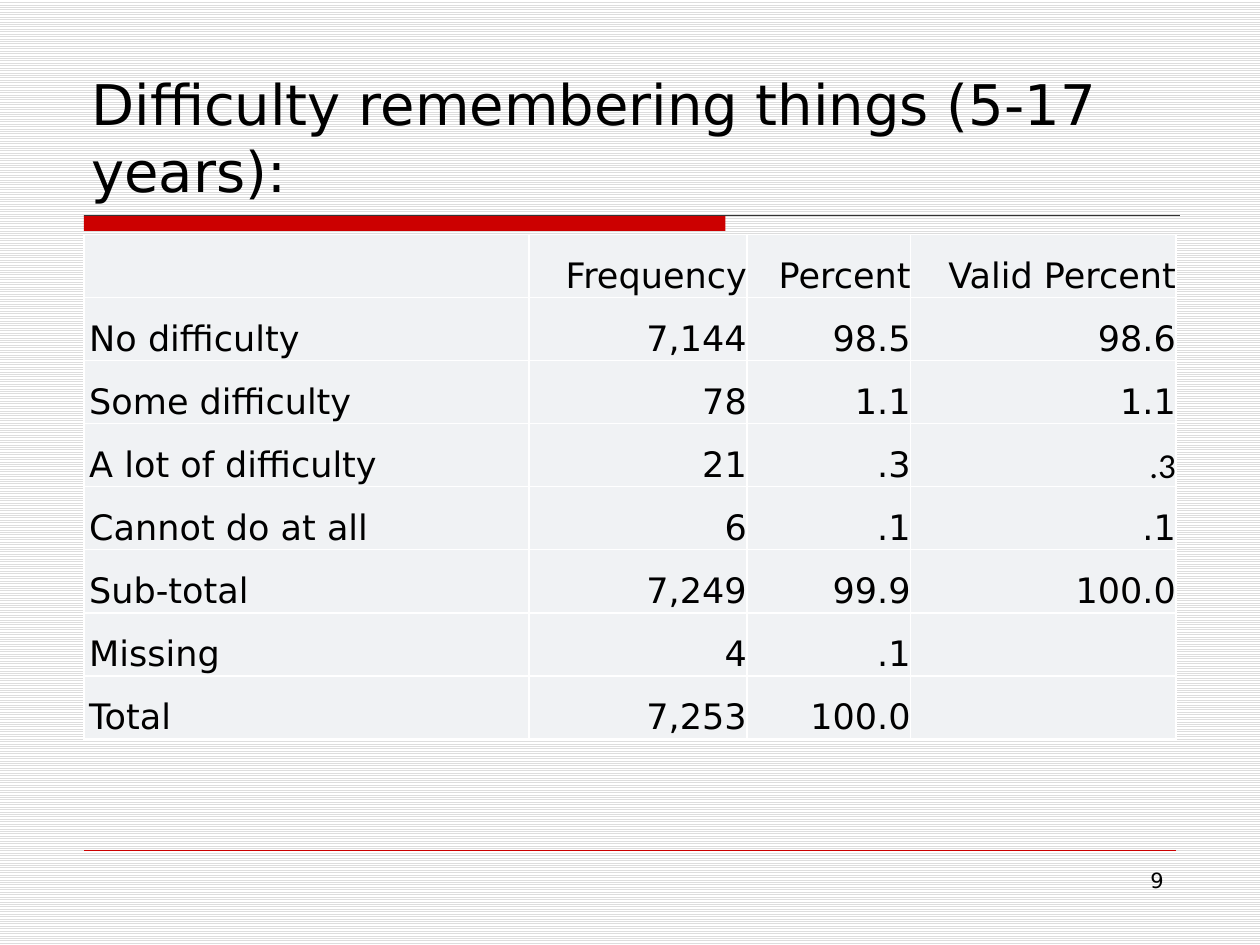
from lxml import etree
from pptx import Presentation
from pptx.dml.color import RGBColor
from pptx.enum.dml import MSO_PATTERN
from pptx.enum.shapes import MSO_CONNECTOR, MSO_SHAPE
from pptx.enum.text import MSO_ANCHOR, MSO_AUTO_SIZE, PP_ALIGN
from pptx.oxml import parse_xml
from pptx.oxml.ns import nsdecls, qn
from pptx.util import Pt

RED = RGBColor(0xCC, 0x00, 0x00)
DARK = RGBColor(0x33, 0x33, 0x33)
BLACK = RGBColor(0x00, 0x00, 0x00)
WHITE = RGBColor(0xFF, 0xFF, 0xFF)
STRIPE = RGBColor(0xDD, 0xDD, 0xDD)
CELL = RGBColor(0xF0, 0xF2, 0xF4)
FONT = "DejaVu Sans"
LEFT, WIDTH = 48, 624


def write(p, text, size, align, font=FONT):
    p.alignment = align
    r = p.add_run()
    r.text = text
    r.font.name, r.font.size = font, Pt(size)
    r.font.color.rgb = BLACK


def add_rule(y, right, color, weight):
    """Draw a horizontal line from the left margin."""
    line = s.shapes.add_connector(
        MSO_CONNECTOR.STRAIGHT, Pt(LEFT), Pt(y), Pt(right), Pt(y))
    line.line.color.rgb = color
    line.line.width = Pt(weight)
    etree.SubElement(line._element.spPr, qn("a:effectLst"))


prs = Presentation()
prs.slide_width, prs.slide_height = Pt(720), Pt(540)
s = prs.slides.add_slide(prs.slide_layouts[5])

bg = s.background.fill
bg.patterned()
bg.pattern = MSO_PATTERN.LIGHT_HORIZONTAL
bg.fore_color.rgb, bg.back_color.rgb = STRIPE, WHITE

# Red bar and rules
bar = s.shapes.add_shape(
    MSO_SHAPE.RECTANGLE, Pt(LEFT), Pt(123), Pt(366.5), Pt(9))
bar.shadow.inherit = False
bar.fill.solid()
bar.fill.fore_color.rgb = RED
bar.line.fill.background()
add_rule(123, 674.5, DARK, 0.75)
add_rule(486, LEFT + WIDTH, RED, 0.25)

# Title and slide number
title = s.shapes.title
title.left, title.top, title.width, title.height = Pt(45), Pt(24), Pt(661), Pt(96)
tf = title.text_frame
tf.word_wrap = True
tf.auto_size = MSO_AUTO_SIZE.NONE
tf.vertical_anchor = MSO_ANCHOR.BOTTOM
write(tf.paragraphs[0], "Difficulty remembering things (5-17 years):", 32, PP_ALIGN.LEFT)

number = s.shapes.add_textbox(Pt(516), Pt(492), Pt(156), Pt(37.5))
number.text_frame.word_wrap = True
write(number.text_frame.paragraphs[0], "9", 12, PP_ALIGN.RIGHT)

# Table
ROWS = [
    ("", "Frequency", "Percent", "Valid Percent"),
    ("No difficulty", "7,144", "98.5", "98.6"),
    ("Some difficulty", "78", "1.1", "1.1"),
    ("A lot of difficulty", "21", ".3", ".3"),
    ("Cannot do at all", "6", ".1", ".1"),
    ("Sub-total", "7,249", "99.9", "100.0"),
    ("Missing", "4", ".1", ""),
    ("Total", "7,253", "100.0", ""),
]
COL_WIDTHS = [254.2, 124.6, 93.6, 151.6]
CALIBRI_CELL = (3, 3)
CELL_FORMAT = {
    "margin_left": 0, "margin_right": 0, "margin_top": 0, "margin_bottom": 0,
    "vertical_anchor": MSO_ANCHOR.MIDDLE,
}
PARA_FORMAT = {"line_spacing": 1.5, "space_before": Pt(6), "space_after": Pt(6)}

table = s.shapes.add_table(
    len(ROWS), len(COL_WIDTHS), Pt(LEFT), Pt(134), Pt(WIDTH), Pt(28 * len(ROWS))).table
table.first_row = table.horz_banding = False
for col, width in zip(table.columns, COL_WIDTHS):
    col.width = Pt(width)

for i, row in enumerate(ROWS):
    for j, text in enumerate(row):
        cell = table.cell(i, j)
        for name, value in CELL_FORMAT.items():
            setattr(cell, name, value)
        tc_pr = cell._tc.get_or_add_tcPr()
        for side in "LRTB":
            tc_pr.append(parse_xml(
                f'<a:ln{side} {nsdecls("a")} w="{Pt(1)}"><a:solidFill>'
                f'<a:srgbClr val="{WHITE}"/></a:solidFill></a:ln{side}>'))
        cell.fill.solid()
        cell.fill.fore_color.rgb = CELL
        if not text:
            continue
        p = cell.text_frame.paragraphs[0]
        for name, value in PARA_FORMAT.items():
            setattr(p, name, value)
        p_pr = p._p.get_or_add_pPr()
        p_pr.set("marL", str(Pt(3)))
        p_pr.set("indent", "0")
        write(p, text, 20, PP_ALIGN.RIGHT if j else PP_ALIGN.LEFT,
              "Calibri" if (i, j) == CALIBRI_CELL else FONT)

prs.save("out.pptx")
